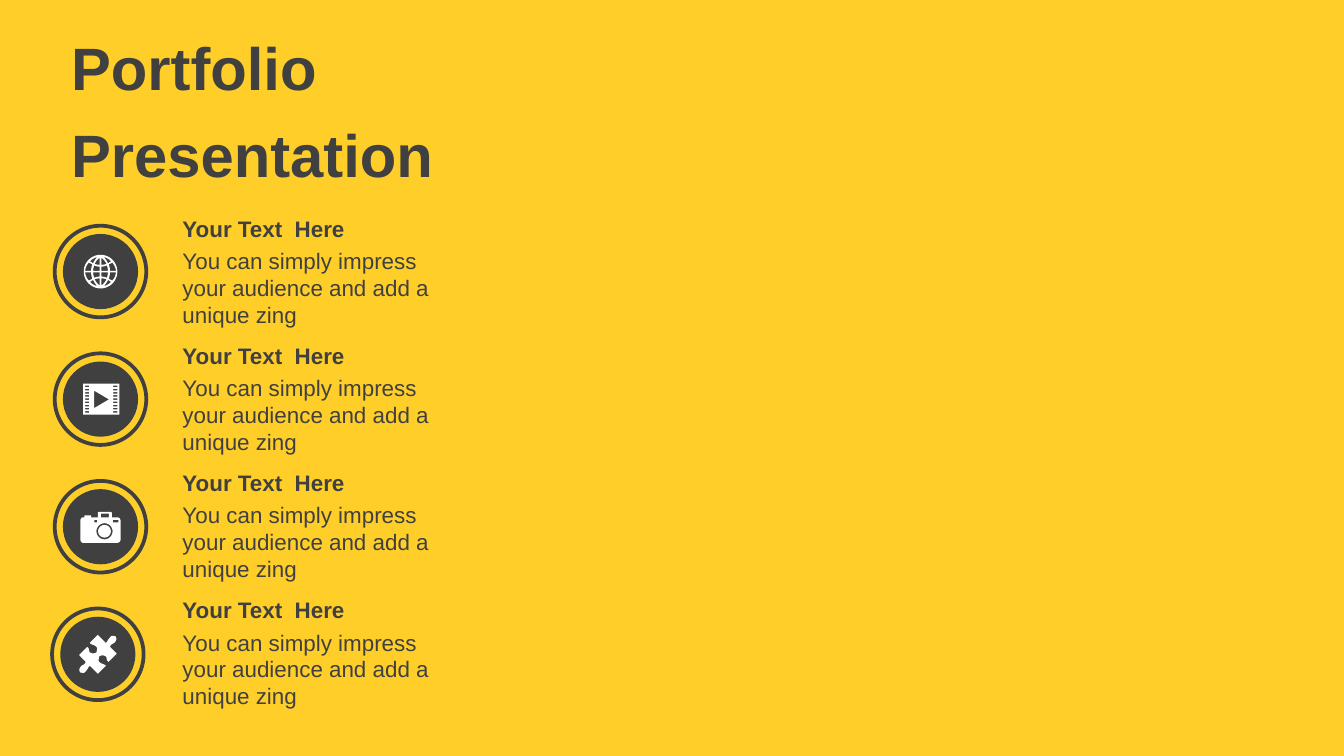
from math import cos, pi, sin
from pptx import Presentation
from pptx.dml.color import RGBColor
from pptx.enum.shapes import MSO_SHAPE
from pptx.enum.text import MSO_ANCHOR, MSO_AUTO_SIZE, PP_ALIGN
from pptx.util import Cm, Pt

YELLOW = RGBColor(0xFF, 0xCE, 0x29)
DARK = RGBColor(0x40, 0x40, 0x40)
WHITE = RGBColor(0xFF, 0xFF, 0xFF)
UNIT = Cm(2.54) / 10000


def trace(steps):
    points = []
    for step in steps:
        if len(step) == 2:
            points.append(step)
            continue
        x0, y0 = points[-1]
        x1, y1, x2, y2, x3, y3 = step
        for k in range(1, 9):
            t = k / 8
            a, b, c, d = (1 - t) ** 3, 3 * t * (1 - t) ** 2, 3 * t * t * (1 - t), t ** 3
            points.append((a * x0 + b * x1 + c * x2 + d * x3,
                           a * y0 + b * y1 + c * y2 + d * y3))
    return points


def paint(shape, fill):
    shape.shadow.inherit = False
    shape.fill.solid()
    shape.fill.fore_color.rgb = fill
    shape.line.fill.background()


def_box = lambda x, y, w, h: [(x, y), (x + w, y), (x + w, y + h), (x, y + h)]
ring = lambda x, y, r: [(x + r * cos(k * pi / 24), y + r * sin(k * pi / 24)) for k in range(48)]

cells = [
    [(0.6, 0.6), (0.6, 3.6), (2, 3.7, 3.3, 4, 4.6, 4.6), (5.2, 3.4, 5.5, 2, 5.5, 0.6)],
    [(7, 0.6), (7, 2.4, 6.6, 4, 6.1, 5.4), (7, 5.8, 8, 6.2, 8.7, 6.7), (10.3, 5, 11.3, 3, 11.4, 0.6)],
    [(0.6, 5), (0.6, 10.3), (2.2, 9.3, 3.5, 7.6, 4.4, 5.7), (3.2, 5.3, 2, 5.1, 0.6, 5)],
    [(5.5, 6.2), (4.8, 7.8, 3.8, 9.4, 2.5, 10.8), (4.6, 10.3, 6.4, 9.2, 7.8, 7.7), (7.1, 7.1, 6.3, 6.6, 5.5, 6.2)],
]
globe = [ring(0, 0, 12.5)]
for cell in cells:
    for sx in (-1, 1):
        for sy in (-1, 1):
            globe.append([(sx * x, sy * y) for x, y in trace(cell)])

film = [def_box(-13, -11.5, 27, 23), [(-4.7, -6.3), (-4.7, 6.7), (6.3, 0.2)]]
for row in range(9):
    for x in (-11.5, 9.5):
        film.append(def_box(x, -10 + 2.37 * row, 3, 1.1))

camera = [
    trace([(-1, -11), (7, -11), (8, -11, 8.5, -10.6, 8.5, -10), (8.5, -7), (12, -7),
           (14, -7, 15, -6, 15, -4), (15, 9), (15, 11, 14, 12, 12, 12), (-13, 12),
           (-14, 12, -15, 11, -15, 9), (-15, -4), (-15, -6, -14, -7, -13, -7),
           (-12, -7), (-12, -8.4), (-7, -8.4), (-7, -7), (-2, -7), (-2, -10),
           (-2, -10.6, -1.6, -11, -1, -11)]),
    ring(3, 3.4, 6), ring(3, 3.4, 4.7),
    def_box(-4.5, -5, 2, 1.8), def_box(9.3, -5, 4, 1.8), def_box(0.3, -9.8, 6, 2.8),
]

half = trace([(13, -13.5), (14, -12.5, 14, -10.5, 13, -9.5), (12, -7.5, 10, -8.5, 9, -5.5),
              (14, -0.5), (8, 5.5), (6, 4.5, 7, 2.5, 6, 1.5), (4, 0.5, 3, 0.5, 1, 1.5),
              (1, 2.5, 0, 4.5, 1, 5.5), (3, 7.5, 4, 6.5, 6, 8.5), (0, 14.5), (-6, 8.5),
              (-8, 10.5, -7, 10.5, -9, 12.5), (-10, 14.5, -12, 13.5, -13, 13.5)])
puzzle = [half + [(-x, -y) for x, y in half]]

deck = Presentation()
deck.slide_width, deck.slide_height = Cm(25.4), Cm(14.28)
slide = deck.slides.add_slide(deck.slide_layouts[5])
slide.background.fill.solid()
slide.background.fill.fore_color.rgb = YELLOW

title = slide.shapes.title
title.left, title.top, title.width, title.height = Cm(1.09), Cm(0.41), Cm(8.2), Cm(3.33)
frame = title.text_frame
frame.text = "Portfolio\nPresentation"
frame.auto_size = MSO_AUTO_SIZE.NONE
frame.vertical_anchor = MSO_ANCHOR.MIDDLE
for para in frame.paragraphs:
    para.alignment = PP_ALIGN.LEFT
    font = para.runs[0].font
    font.name, font.size, font.bold = "Arial", Pt(32), True
    font.color.rgb = DARK
frame.paragraphs[1].space_before = Pt(8)

icons = [(globe, 1.9), (film, 1.9), (camera, 1.9), (puzzle, 1.85)]
for i, (icon, cx) in enumerate(icons):
    cy = 5.13 + 2.41 * i
    for size, fill in ((1.73, YELLOW), (1.42, DARK)):
        disc = slide.shapes.add_shape(MSO_SHAPE.OVAL, Cm(cx - size / 2), Cm(cy - size / 2),
                                      Cm(size), Cm(size))
        paint(disc, fill)
        if fill == YELLOW:
            disc.line.color.rgb = DARK
            disc.line.width = Pt(2)

    pen = None
    for loop in icon:
        points = [(x * 100, y * 100) for x, y in loop]
        if pen is None:
            pen = slide.shapes.build_freeform(*points[0], scale=UNIT)
        else:
            pen.move_to(*points[0])
        pen.add_line_segments(points[1:], close=True)
    paint(pen.convert_to_shape(Cm(cx), Cm(cy)), WHITE)

    for text, top, height, bold in (
            ("Your Text  Here", 3.94, 0.76, True),
            ("You can simply impress your audience and add a unique zing", 4.55, 1.8, False)):
        note = slide.shapes.add_textbox(Cm(3.2), Cm(top + 2.4 * i), Cm(5.59), Cm(height))
        note.text_frame.word_wrap = True
        note.text_frame.text = text
        font = note.text_frame.paragraphs[0].runs[0].font
        font.name, font.size, font.bold = "Arial", Pt(12), bold
        font.color.rgb = DARK

deck.save("out.pptx")
